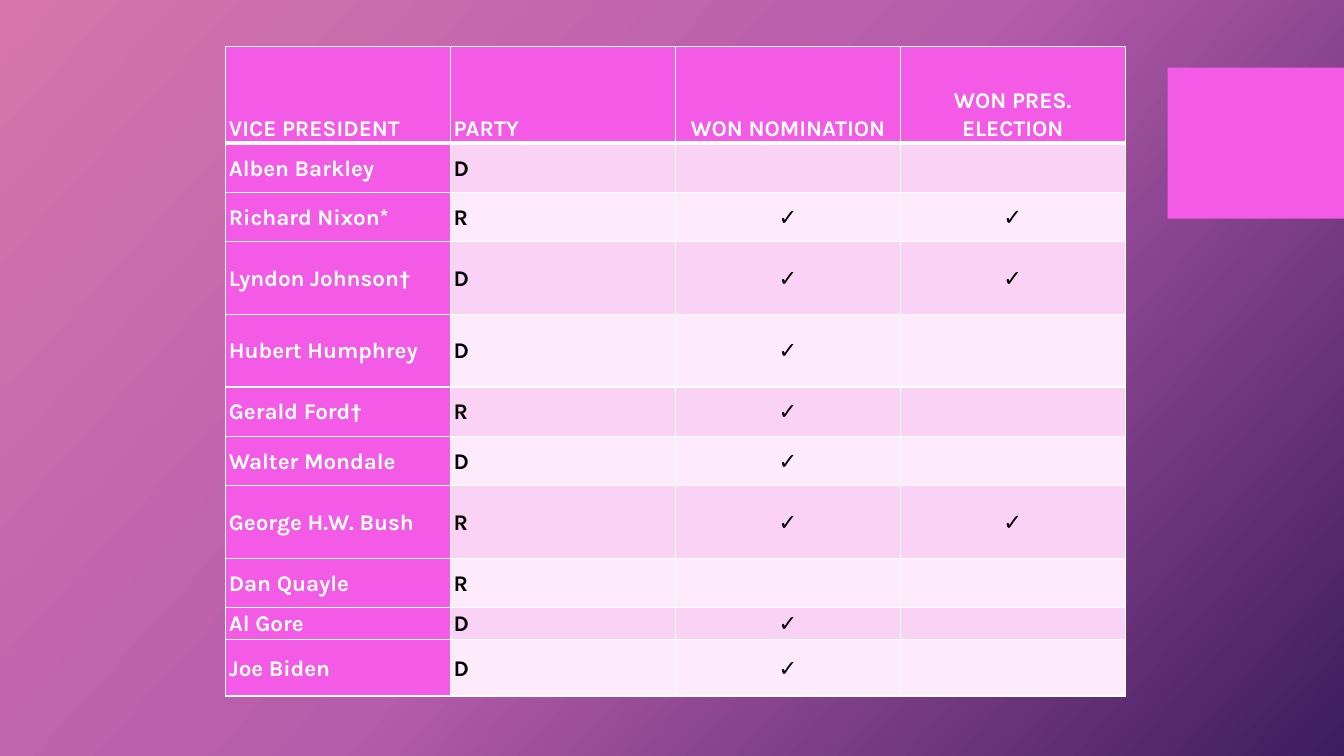
import copy
from dataclasses import dataclass

import lxml.etree
import pptx
import pptx.dml.color
import pptx.enum.shapes
import pptx.enum.text
import pptx.oxml.ns
import pptx.util

Inches = pptx.util.Inches
Pt = pptx.util.Pt
qn = pptx.oxml.ns.qn
Align = pptx.enum.text.PP_ALIGN
Anchor = pptx.enum.text.MSO_ANCHOR


@dataclass(frozen=True)
class Theme:
    font: str = "Karla"
    text_size: int = 16
    line_spacing: float = 1.07
    accent: str = "F35AE6"
    bands: tuple = ("FAD2F5", "FDEAFA")
    light: str = "FFFFFF"
    dark: str = "000000"
    gradient: tuple = ((0, "D774AD"), (0.5, "B55CAB"), (1, "3E1C5F"))
    gradient_angle: int = 42
    rule: float = 1
    header_rule: float = 3


THEME = Theme()
CHECK = "✓"
HEADINGS = ("VICE PRESIDENT", "PARTY", "WON NOMINATION", "WON PRES. ELECTION")
HEADER_HEIGHT = 0.96

# Name, party, won nomination, won election, row height in inches
VICE_PRESIDENTS = (
    ("Alben Barkley", "D", False, False, 0.49),
    ("Richard Nixon*", "R", True, True, 0.49),
    ("Lyndon Johnson†", "D", True, True, 0.72),
    ("Hubert Humphrey", "D", True, False, 0.72),
    ("Gerald Ford†", "R", True, False, 0.49),
    ("Walter Mondale", "D", True, False, 0.49),
    ("George H.W. Bush", "R", True, True, 0.72),
    ("Dan Quayle", "R", False, False, 0.49),
    ("Al Gore", "D", True, False, 0.31),
    ("Joe Biden", "D", True, False, 0.56),
)


def rgb(value):
    return pptx.dml.color.RGBColor.from_string(value)


def paint_background(page):
    fill = page.background.fill
    fill.gradient()
    fill.gradient_angle = 360 - THEME.gradient_angle
    stop_list = next(page.element.iter(qn("a:gsLst")))
    stop_list.insert(1, copy.deepcopy(stop_list[0]))
    for stop, (position, color) in zip(fill.gradient_stops, THEME.gradient):
        stop.position = position
        stop.color.rgb = rgb(color)


def add_accent_block(page, left, top, width, height):
    block = page.shapes.add_shape(
        pptx.enum.shapes.MSO_SHAPE.RECTANGLE, left, top, width, height)
    block.shadow.inherit = False
    block.fill.solid()
    block.fill.fore_color.rgb = rgb(THEME.accent)
    block.line.fill.background()


def set_borders(cell, top_width, bottom_width):
    properties = cell._tc.get_or_add_tcPr()
    widths = (("L", THEME.rule), ("R", THEME.rule),
              ("T", top_width), ("B", bottom_width))
    for index, (side, width) in enumerate(widths):
        line = lxml.etree.Element(qn("a:ln" + side), w=str(Pt(width)))
        solid = lxml.etree.SubElement(line, qn("a:solidFill"))
        lxml.etree.SubElement(solid, qn("a:srgbClr"), val=THEME.light)
        properties.insert(index, line)


def write_cell(cell, text, color, centered):
    para = cell.text_frame.paragraphs[0]
    para.line_spacing = THEME.line_spacing
    para.alignment = Align.CENTER if centered else Align.LEFT
    if not text:
        # Keep empty cells from stretching short rows
        lxml.etree.SubElement(
            para._p, qn("a:endParaRPr"), sz=str(THEME.text_size * 100))
        return
    span = para.add_run()
    span.text = text
    span.font.name = THEME.font
    span.font.size = Pt(THEME.text_size)
    span.font.bold = True
    span.font.color.rgb = rgb(color)


def add_results_table(page, left, top, width):
    rows = [HEADINGS] + [
        (name, party, CHECK if nominated else "", CHECK if elected else "")
        for name, party, nominated, elected, _ in VICE_PRESIDENTS]
    heights = [HEADER_HEIGHT] + [entry[-1] for entry in VICE_PRESIDENTS]
    table = page.shapes.add_table(
        len(rows), len(HEADINGS), left, top, width,
        Inches(sum(heights))).table
    table.first_col = True

    for row_index, (texts, height) in enumerate(zip(rows, heights)):
        table.rows[row_index].height = Inches(height)
        is_header = row_index == 0
        for column_index, text in enumerate(texts):
            cell = table.cell(row_index, column_index)
            accented = is_header or column_index == 0
            band = THEME.bands[(row_index - 1) % 2]

            # Cell layout
            cell.margin_left = cell.margin_right = Inches(0.03)
            cell.margin_top = Inches(0.03 if is_header else 0.02)
            cell.margin_bottom = Inches(0.01 if is_header else 0.02)
            cell.vertical_anchor = Anchor.BOTTOM if is_header else Anchor.MIDDLE

            # Cell colours and text
            cell.fill.solid()
            cell.fill.fore_color.rgb = rgb(THEME.accent if accented else band)
            set_borders(cell,
                        THEME.header_rule if row_index == 1 else THEME.rule,
                        THEME.header_rule if is_header else THEME.rule)
            write_cell(cell, text, THEME.light if accented else THEME.dark,
                       centered=column_index >= 2)


def main():
    deck = pptx.Presentation()
    deck.slide_width = Inches(13.33)
    deck.slide_height = Inches(7.5)
    page = deck.slides.add_slide(deck.slide_layouts[6])
    paint_background(page)
    add_accent_block(page, Inches(11.58), Inches(0.67), Inches(1.75), Inches(1.5))
    add_results_table(page, Inches(2.24), Inches(0.46), Inches(8.92))
    deck.save("out.pptx")


if __name__ == "__main__":
    main()
